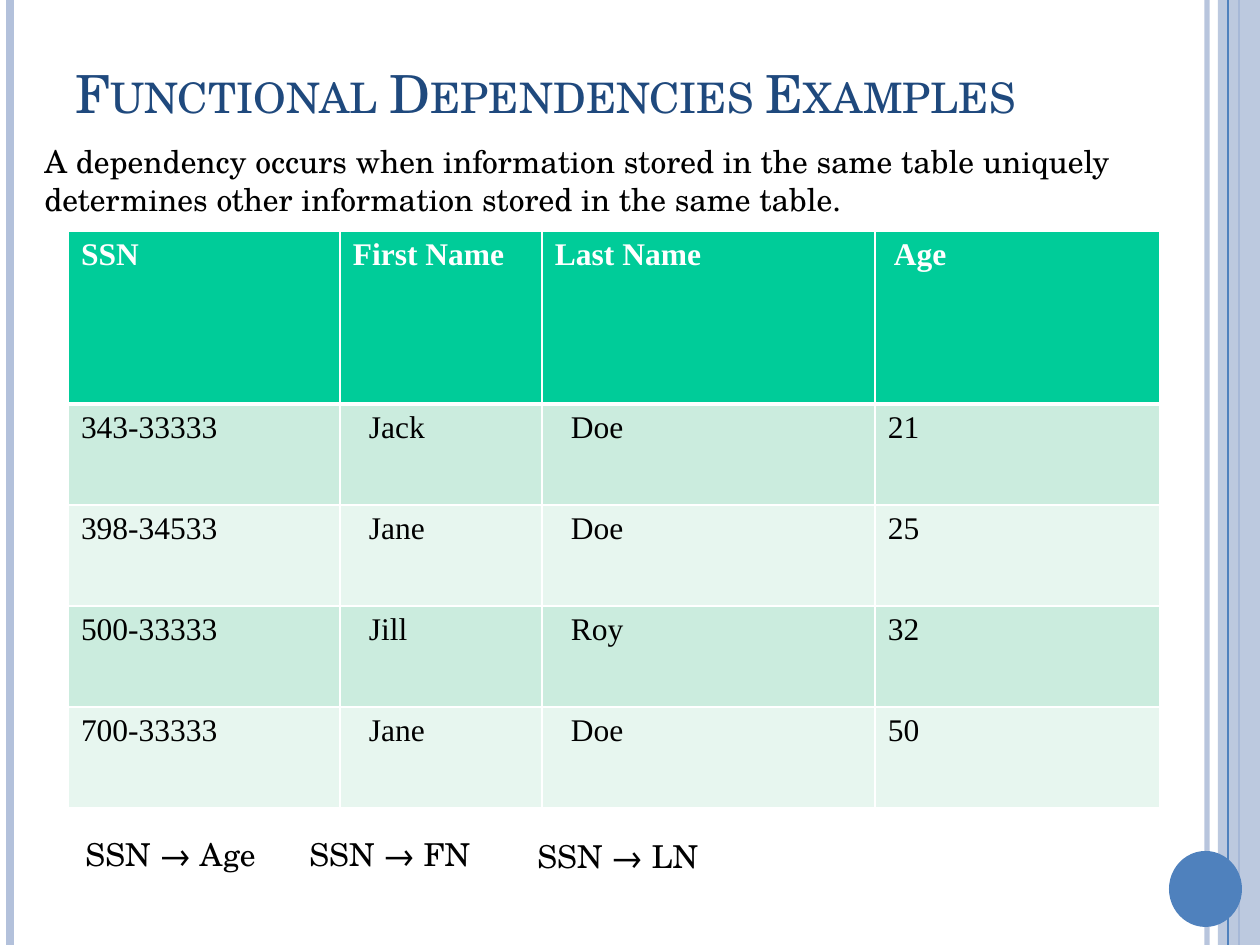
from lxml import etree
from pptx import Presentation
from pptx.dml.color import RGBColor
from pptx.enum.shapes import MSO_CONNECTOR, MSO_SHAPE
from pptx.enum.text import MSO_ANCHOR, MSO_AUTO_SIZE, PP_ALIGN
from pptx.oxml.ns import qn
from pptx.util import Emu, Pt

STRAIGHT = MSO_CONNECTOR.STRAIGHT
RECT, OVAL = MSO_SHAPE.RECTANGLE, MSO_SHAPE.OVAL
MIDDLE, LEFT = MSO_ANCHOR.MIDDLE, PP_ALIGN.LEFT
FIXED, GROW = MSO_AUTO_SIZE.NONE, MSO_AUTO_SIZE.SHAPE_TO_FIT_TEXT

PALE_BLUE = RGBColor(0xB3, 0xC1, 0xDB)
BLUE = RGBColor(0x4F, 0x81, 0xBD)
NAVY = RGBColor(0x1F, 0x49, 0x7D)
GREEN = RGBColor(0x00, 0xCC, 0x99)
BAND_DARK = RGBColor(0xCB, 0xEC, 0xDE)
BAND_LIGHT = RGBColor(0xE7, 0xF6, 0xEF)
WHITE = RGBColor(0xFF, 0xFF, 0xFF)
BLACK = RGBColor(0x00, 0x00, 0x00)

SERIF, TABLE_FONT = "TeX Gyre Schola", "Times New Roman"
BODY = {"name": SERIF, "size": Pt(18)}
WIDTH, HEIGHT = 1260, 945

HEADERS = ["SSN", "First Name", "Last Name", "Age"]
PEOPLE = [
    ["343-33333", "Jack", "Doe", "21"],
    ["398-34533", "Jane", "Doe", "25"],
    ["500-33333", "Jill", "Roy", "32"],
    ["700-33333", "Jane", "Doe", "50"],
]
COLUMNS = [272, 202, 333, 285]
HEADER_HEIGHT, ROW_HEIGHT = 173, 101
CELL_MARGIN = 13
HEADER_INDENTS = [0, 0, 0, 6]
BODY_INDENTS = [0, 16, 16, 0]


def px(n):
    return Emu(round(n * 914400 / 126))


def box_px(*box):
    return [px(n) for n in box]


def write(tf, text, color, **font):
    p = tf.paragraphs[0]
    p.alignment = LEFT
    r = p.add_run()
    r.text = text
    r.font.color.rgb = color
    for name, value in font.items():
        setattr(r.font, name, value)
    return r


def set_alpha(sp, percent):
    color = next(sp._element.spPr.iter(qn("a:srgbClr")))
    etree.SubElement(color, qn("a:alpha"), val=str(percent * 1000))


def add_stripe(s, x, top, height, color, weight):
    line = s.shapes.add_connector(STRAIGHT, *box_px(x, top, x, top + height))
    line.line.color.rgb = color
    line.line.width = Pt(weight)
    etree.SubElement(line._element.spPr, qn("a:effectLst"))
    return line


def add_block(s, shape, box, color):
    sp = s.shapes.add_shape(shape, *box_px(*box))
    sp.shadow.inherit = False
    sp.fill.solid()
    sp.fill.fore_color.rgb = color
    sp.line.fill.background()
    return sp


def add_frame(s, left, top, width, height):
    """Vertical stripes on both edges and the disc at lower right."""
    right = left + width
    set_alpha(add_stripe(s, right - 53, top, height, PALE_BLUE, 3), 93)
    add_stripe(s, left + 10, top, height, PALE_BLUE, 4.5)
    add_stripe(s, right - 21, top, height, BLUE, 1.5)
    set_alpha(add_block(s, RECT, (right - 42, top, 42, height), PALE_BLUE), 87)
    add_stripe(s, right - 32, top, height, BLUE, 0.75)
    add_block(s, OVAL, (right - 91, top + height - 94, 73, 76), BLUE)


def add_title(s, box, text):
    title = s.shapes.title
    title.left, title.top, title.width, title.height = box_px(*box)
    tf = title.text_frame
    tf.auto_size = FIXED
    tf.vertical_anchor = MIDDLE
    r = write(tf, text, NAVY, name=SERIF, size=Pt(30))
    r.font._element.set("cap", "small")


def add_text(s, box, text, wrap):
    tf = s.shapes.add_textbox(*box_px(*box)).text_frame
    tf.word_wrap = wrap
    tf.auto_size = GROW
    write(tf, text, BLACK, **BODY)


def add_borders(cell, weights):
    """Draw white borders; they must precede the cell's fill."""
    tc_pr = cell._tc.get_or_add_tcPr()
    for side, weight in weights.items():
        ln = etree.SubElement(tc_pr, qn(f"a:ln{side}"), w=str(Pt(weight)))
        fill = etree.SubElement(ln, qn("a:solidFill"))
        etree.SubElement(fill, qn("a:srgbClr"), val=str(WHITE))


def add_people_table(s, left, top):
    rows = [HEADERS] + PEOPLE
    heights = [HEADER_HEIGHT] + [ROW_HEIGHT] * len(PEOPLE)
    box = box_px(left, top, sum(COLUMNS), sum(heights))
    table = s.shapes.add_table(len(rows), len(COLUMNS), *box).table
    for column, width in zip(table.columns, COLUMNS):
        column.width = px(width)
    for i, (values, height) in enumerate(zip(rows, heights)):
        table.rows[i].height = px(height)
        header = i == 0
        band = GREEN if header else BAND_DARK if i % 2 else BAND_LIGHT
        indents = HEADER_INDENTS if header else BODY_INDENTS
        weights = {"L": 1, "R": 1, "T": 3 if i == 1 else 1, "B": 3 if header else 1}
        for j, text in enumerate(values):
            cell = table.cell(i, j)
            cell.margin_left = px(CELL_MARGIN + indents[j])
            add_borders(cell, weights)
            cell.fill.solid()
            cell.fill.fore_color.rgb = band
            write(cell.text_frame, text, WHITE if header else BLACK,
                  name=TABLE_FONT, size=Pt(18), bold=header)


def add_dependencies(s, left, top):
    """Row of arrows from the key to each dependent column."""
    for dx, dy, width, target in [(0, 0, 205, "Age"), (224, 0, 188, "FN"),
                                  (452, 2, 188, "LN")]:
        add_text(s, (left + dx, top + dy, width, 50), f"SSN → {target}", False)


def main():
    prs = Presentation()
    prs.slide_width, prs.slide_height = px(WIDTH), px(HEIGHT)
    s = prs.slides.add_slide(prs.slide_layouts[5])
    add_frame(s, 0, 0, WIDTH, HEIGHT)
    add_title(s, (63, 38, 1092, 110), "Functional Dependencies Examples")
    add_people_table(s, 68, 231)
    add_text(s, (32, 136, 1165, 89),
             "A dependency occurs when information stored in the same table uniquely "
             "determines other information stored in the same table.", True)
    add_dependencies(s, 73, 829)
    prs.save("out.pptx")


if __name__ == "__main__":
    main()
